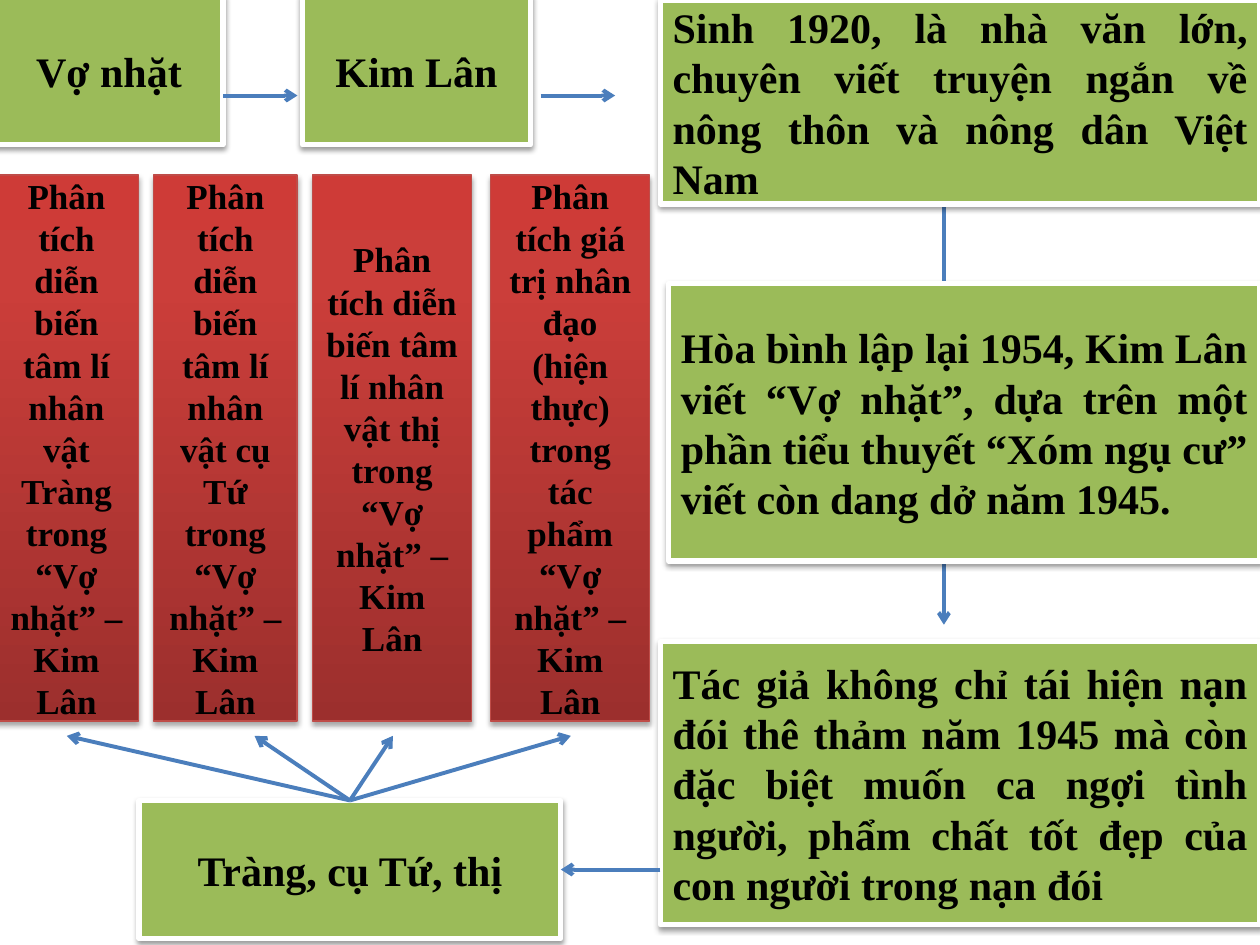
from copy import deepcopy
from dataclasses import dataclass

from lxml.etree import SubElement
from pptx import Presentation
from pptx.dml.color import RGBColor as Rgb
from pptx.enum.shapes import MSO_CONNECTOR as Connector, MSO_SHAPE as Shape
from pptx.enum.text import MSO_ANCHOR as Anchor, PP_ALIGN as Align
from pptx.oxml.ns import qn
from pptx.util import Pt

TOP, RIGHT = 0, 3


@dataclass(frozen=True)
class Theme:
    font: str = "Times New Roman"
    text: str = "000000"
    green: str = "9BBB59"
    white: str = "FFFFFF"
    arrow: str = "4B7EBC"
    red_line: str = "BF4C48"
    red_stops: tuple = ((0, "9C2F2D"), (0.8, "CB3E3A"), (1, "CE3B37"))
    large: int = 24
    small: int = 20


class Diagram:
    def __init__(self, slide, theme):
        self.slide = slide
        self.theme = theme

    def box(self, frame, text, size, align, line, line_width, shadow):
        box = self.slide.shapes.add_shape(Shape.RECTANGLE, *map(Pt, frame))
        box.line.color.rgb = Rgb.from_string(line)
        box.line.width = Pt(line_width)
        self.shadow(box, *shadow)
        box.text_frame.word_wrap = True
        box.text_frame.vertical_anchor = Anchor.MIDDLE
        para = box.text_frame.paragraphs[0]
        para.alignment = align
        span = para.add_run()
        span.text = text
        styles = {"name": self.theme.font, "size": Pt(size), "bold": True}
        for name, value in styles.items():
            setattr(span.font, name, value)
        span.font.color.rgb = Rgb.from_string(self.theme.text)
        return box

    def shadow(self, box, opacity, distance):
        box.shadow.inherit = False
        effects = box._element.spPr.find(qn("a:effectLst"))
        values = {
            "blurRad": Pt(3.1),
            "dist": Pt(distance),
            "dir": 90 * 60000,
            "rotWithShape": 0,
        }
        outer = SubElement(effects, qn("a:outerShdw"))
        for name, value in values.items():
            outer.set(name, str(int(value)))
        color = SubElement(outer, qn("a:srgbClr"), val="000000")
        SubElement(color, qn("a:alpha"), val=str(opacity * 1000))

    def card(self, frame, text, align=Align.CENTER):
        theme = self.theme
        box = self.box(frame, text, theme.large, align, theme.white, 3, (38, 1.6))
        box.fill.solid()
        box.fill.fore_color.rgb = Rgb.from_string(theme.green)
        return box

    def column(self, frame, text):
        theme = self.theme
        box = self.box(
            frame, text, theme.small, Align.CENTER, theme.red_line, 0.75, (35, 1.8)
        )
        box.fill.gradient()
        box.fill.gradient_angle = 90
        stops = box._element.spPr.find(qn("a:gradFill")).find(qn("a:gsLst"))
        stops.append(deepcopy(stops[0]))
        for stop, (position, color) in zip(box.fill.gradient_stops, theme.red_stops):
            stop.position = position
            stop.color.rgb = Rgb.from_string(color)
        return box

    def arrow(self, start, end):
        arrow = self.slide.shapes.add_connector(
            Connector.STRAIGHT, *map(Pt, (*start, *end))
        )
        arrow.line.color.rgb = Rgb.from_string(self.theme.arrow)
        arrow.line.width = Pt(2.25)
        SubElement(arrow.line._get_or_add_ln(), qn("a:tailEnd"), type="arrow")
        SubElement(arrow._element.spPr, qn("a:effectLst"))
        return arrow


def main():
    deck = Presentation()
    deck.slide_width, deck.slide_height = Pt(720), Pt(540)
    page = deck.slides.add_slide(deck.slide_layouts[6])
    diagram = Diagram(page, Theme())

    for left, title in ((-3, "Vợ nhặt"), (172.8, "Kim Lân")):
        diagram.card((left, -2.2, 130.5, 85), title)
    for left in (127.5, 309):
        diagram.arrow((left, 54.6), (left + 42.5, 54.6))

    diagram.arrow((539.4, 116.6), (539.4, 174))
    diagram.arrow((539.4, 321), (539.4, 357))
    facts = (
        (
            (377.3, 0, 342.7, 116.6),
            "Sinh 1920, là nhà văn lớn, chuyên viết truyện ngắn về nông thôn "
            "và nông dân Việt Nam",
        ),
        (
            (382, 162.2, 338, 158.4),
            "Hòa bình lập lại 1954, Kim Lân viết “Vợ nhặt”, dựa trên một phần "
            "tiểu thuyết “Xóm ngụ cư” viết còn dang dở năm 1945.",
        ),
        (
            (377.3, 366.5, 342.7, 162),
            "Tác giả không chỉ tái hiện nạn đói thê thảm năm 1945 mà còn đặc "
            "biệt muốn ca ngợi tình người, phẩm chất tốt đẹp của con người "
            "trong nạn đói",
        ),
    )
    for frame, text in facts:
        diagram.card(frame, text, Align.JUSTIFY)

    characters = diagram.card((79.5, 457.4, 241, 79), "Tràng, cụ Tứ, thị")
    diagram.arrow((377.3, 496.9), (320.5, 496.9)).end_connect(characters, RIGHT)

    inner_life = "diễn biến tâm lí nhân vật"
    topics = (
        (-3, 82, 38.2, f"{inner_life} Tràng trong"),
        (87.8, 82, 145.5, f"{inner_life} cụ Tứ trong"),
        (178.6, 91, 224.5, f"{inner_life} thị trong"),
        (280.4, 91, 326.2, "giá trị nhân đạo (hiện thực) trong tác phẩm"),
    )
    for left, width, tip, topic in topics:
        diagram.column(
            (left, 100, width, 312), f"Phân tích {topic} “Vợ nhặt” – Kim Lân"
        )
        arrow = diagram.arrow((200, 457.4), (tip, 420.5))
        arrow.begin_connect(characters, TOP)

    deck.save("out.pptx")


if __name__ == "__main__":
    main()
